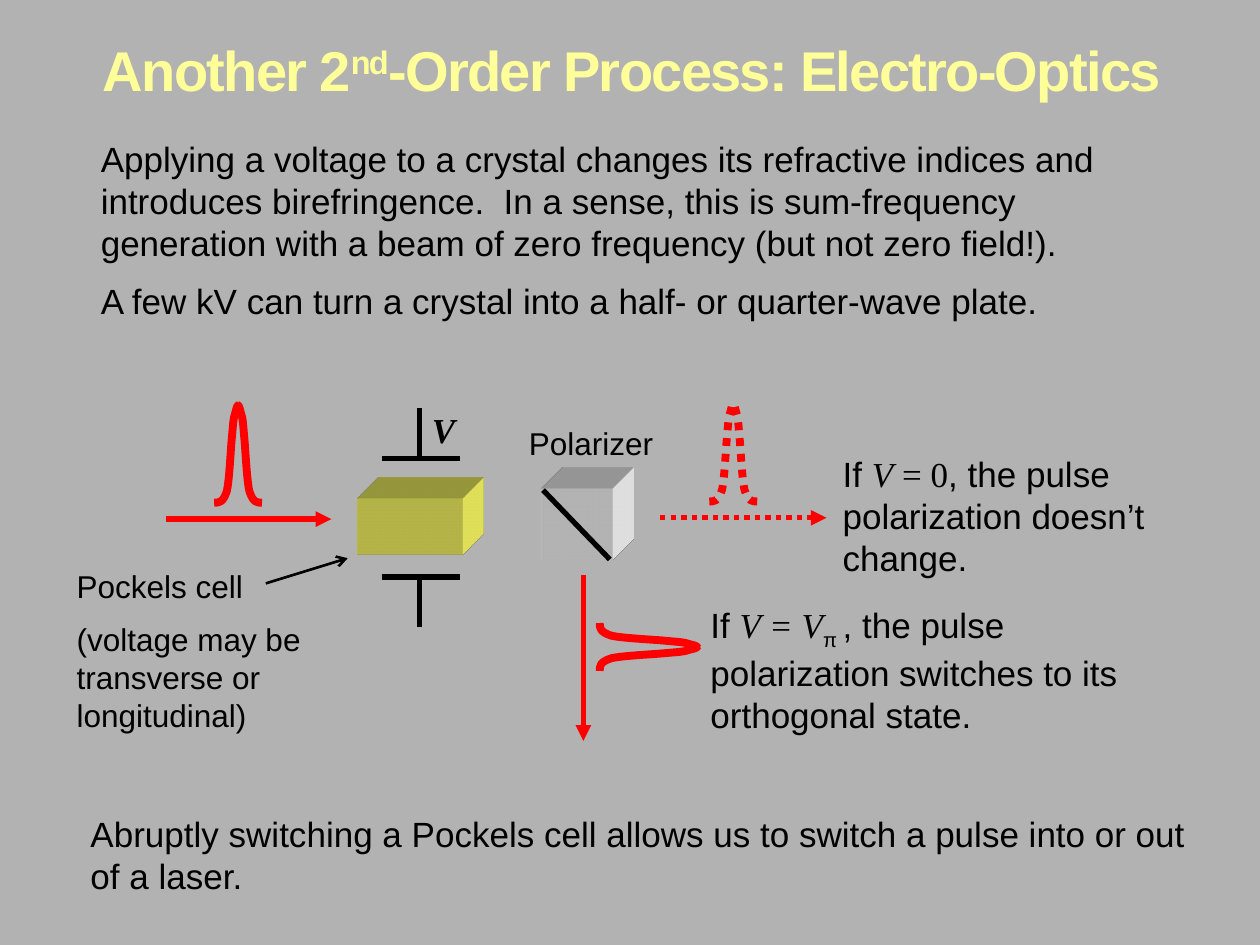
"""Build a slide on electro-optics: a Pockels cell, a polarizer and their pulses."""
from dataclasses import dataclass

import pptx
import pptx.dml.color
import pptx.enum.dml
import pptx.enum.shapes
import pptx.enum.text
import pptx.oxml.ns
import pptx.util
from lxml import etree

COLS, ROWS = 100, 75
CELL = pptx.util.Inches(10) / COLS
RED, BLACK = "FF0000", "000000"
SANS, SERIF = "Arial", "Times New Roman"
DEPTH = 4.7
MATH = {"face": SERIF, "italic": True}
HALF = ((1.9, 0), (1.5, 0), (1.2, 0), (0.9, 0.9), (0.7, 1.7), (0.6, 4), (0.5, 5.1),
        (0.4, 6.1), (0.4, 6.7), (0.2, 7.2), (0.1, 7.7), (0, 7.8), (-0.1, 7.8))


@dataclass(frozen=True)
class Line:
    """A straight line between two grid points."""
    start: tuple
    end: tuple
    color: str = BLACK
    width: float = 3
    head: str = ""
    dotted: bool = False


@dataclass(frozen=True)
class Pulse:
    """A bell-shaped pulse standing on a grid point."""
    foot: tuple
    turned: bool = False
    dotted: bool = False


@dataclass(frozen=True)
class Block:
    """A solid block given by its front face and its colour."""
    box: tuple
    color: str


@dataclass(frozen=True)
class Label:
    """A text box with its paragraphs, each a list of (text, format) runs."""
    box: tuple
    paras: list
    size: float = 20
    wrap: bool = True


def span(*cells: float) -> list:
    """Turn grid cells into lengths."""
    return [pptx.util.Emu(round(cell * CELL)) for cell in cells]


def shade(code: str):
    """Turn a hex string into a colour."""
    return pptx.dml.color.RGBColor.from_string(code)


def mark(parent, tag: str, **attrs: str):
    """Append a drawing element to its parent."""
    return etree.SubElement(parent, pptx.oxml.ns.qn(tag), attrs)


def style(run, face=SANS, size=20, color=BLACK, bold=False, italic=False, base=0, gap=0) -> None:
    """Format one run."""
    font = run.font
    font.name, font.size = face, pptx.util.Pt(size)
    font.bold, font.italic = bold, italic
    font.color.rgb = shade(color)
    props = run._r.get_or_add_rPr()
    if base:
        props.set("baseline", str(base * 1000))
    if gap:
        props.set("spc", str(gap * 100))


def write(frame, paras: list, wrap=True, align="LEFT", anchor="TOP", plain=False, **fmt) -> None:
    """Fill a text frame with paragraphs of formatted runs."""
    frame.word_wrap = wrap
    frame.auto_size = pptx.enum.text.MSO_AUTO_SIZE.NONE
    frame.vertical_anchor = getattr(pptx.enum.text.MSO_ANCHOR, anchor)
    for index, runs in enumerate(paras):
        para = frame.add_paragraph() if index else frame.paragraphs[0]
        if plain:
            props = para._p.get_or_add_pPr()
            props.set("marL", "0")
            props.set("indent", "0")
            mark(props, "a:buNone")
        para.alignment = getattr(pptx.enum.text.PP_ALIGN, align)
        para.space_before = pptx.util.Pt(9 if index else 0)
        for text, extra in runs:
            run = para.add_run()
            run.text = text
            style(run, **{**fmt, **extra})


def place(holder, box: tuple) -> None:
    """Move a placeholder to a grid box."""
    holder.left, holder.top, holder.width, holder.height = span(*box)


def stroke(line, color: str, width: float, dotted: bool) -> None:
    """Format an outline."""
    line.color.rgb = shade(color)
    line.width = pptx.util.Pt(width)
    if dotted:
        line.dash_style = pptx.enum.dml.MSO_LINE.ROUND_DOT


def draw_line(shapes, item: Line) -> None:
    """Draw a line or an arrow."""
    kind = pptx.enum.shapes.MSO_CONNECTOR.STRAIGHT
    link = shapes.add_connector(kind, *span(*item.start, *item.end))
    stroke(link.line, item.color, item.width, item.dotted)
    if item.head:
        mark(link.line._get_or_add_ln(), "a:tailEnd", type=item.head)
    mark(link._element.spPr, "a:effectLst")


def bend(shape) -> None:
    """Turn each three segments of an outline into one cubic curve."""
    parts = list(shape._element.iter(pptx.oxml.ns.qn("a:lnTo")))
    route = parts[0].getparent()
    for first in range(0, len(parts), 3):
        curve = mark(route, "a:cubicBezTo")
        for part in parts[first:first + 3]:
            curve.append(part[0])
            route.remove(part)


def draw_pulse(shapes, item: Pulse) -> None:
    """Draw both mirrored halves of a pulse."""
    x, y = item.foot
    for sign in (-1, 1):
        spots = [span(x + up, y + sign * out) if item.turned else span(x + sign * out, y - up)
                 for out, up in HALF]
        pen = shapes.build_freeform(*spots[0])
        pen.add_line_segments(spots[1:], close=False)
        shape = pen.convert_to_shape()
        bend(shape)
        shape.shadow.inherit = False
        shape.fill.background()
        stroke(shape.line, RED, 4.5, item.dotted)


def draw_block(shapes, item: Block) -> None:
    """Draw a rectangle extruded to the top right."""
    shape = shapes.add_shape(pptx.enum.shapes.MSO_SHAPE.RECTANGLE, *span(*item.box))
    shape.shadow.inherit = False
    shape.fill.solid()
    shape.fill.fore_color.rgb = shade(item.color)
    shape.line.fill.background()
    scene = mark(shape._element.spPr, "a:scene3d")
    mark(scene, "a:camera", prst="legacyObliqueTopRight")
    mark(scene, "a:lightRig", rig="legacyFlat3", dir="b")
    solid = mark(shape._element.spPr, "a:sp3d", extrusionH=str(span(DEPTH)[0]),
                 prstMaterial="legacyMatte")
    for tag in ("a:bevelT", "a:bevelB"):
        mark(solid, tag, w="13500", h="13500", prst="angle")
    mark(mark(solid, "a:extrusionClr"), "a:srgbClr", val=item.color)


BLOCKS = [
    Block((28.4, 39.6, 8.3, 4.4), "FFFF66"),
    Block((43, 38.8, 5.6, 5.6), "FFFFFF"),
]
LINES = [
    Line((13.2, 41.2), (26.3, 41.2), RED, head="triangle"),
    Line((52.4, 41.1), (65.6, 41.1), RED, head="triangle", dotted=True),
    Line((46.3, 45.6), (46.3, 58.8), RED, head="triangle"),
    Line((43.1, 38.9), (48.4, 44.4)),
    Line((21.1, 46.3), (27.6, 44.3), width=1.5, head="arrow"),
    *(Line((30.3, bar), (36.5, bar)) for bar in (36.4, 45.8)),
    *(Line((33.3, bar), (33.3, tip)) for bar, tip in ((36.2, 32.4), (46, 49.8))),
]
PULSES = [
    Pulse((18.9, 39.9)),
    Pulse((58.2, 39.8), dotted=True),
    Pulse((47.6, 51.35), turned=True),
]
TITLE = [[("Another 2", {}), ("nd", {"base": 30}), ("-Order Process: Electro-Optics", {})]]
BODY = [
    [("Applying a voltage to a crystal changes its refractive indices and introduces "
      "birefringence.  In a sense, this is sum-frequency generation with a beam of zero "
      "frequency (but not zero field!).", {})],
    [("A few kV can turn a crystal into a half- or quarter-wave plate.", {})],
]
LABELS = [
    Label((33.3, 31.9, 3.9, 4.3), [[("V", {**MATH, "bold": True})]], wrap=False),
    Label((65.9, 35.4, 26.7, 11), [[("If ", {}), ("V", MATH), (" = 0", {"face": SERIF}),
                                    (", the pulse polarization doesn’t change.", {})]]),
    Label((55.4, 47.4, 37, 11), [[("If ", {}), ("V = V", MATH), ("π ", {"base": -25}),
                                  (", the pulse polarization switches to its orthogonal state.",
                                   {})]]),
    Label((6.2, 64, 89.6, 7.7), [[("Abruptly switching a Pockels cell allows us to switch a "
                                   "pulse into or out of a laser.", {})]]),
    Label((5.1, 44.5, 20.4, 14.5), [[("Pockels cell", {})],
                                    [("(voltage may be transverse or longitudinal)", {})]], 18),
    Label((41, 33.2, 13.3, 4), [[("Polarizer", {})]], 18),
]


def main() -> None:
    """Build and save the slide."""
    deck = pptx.Presentation()
    deck.slide_width, deck.slide_height = span(COLS, ROWS)
    slide = deck.slides.add_slide(deck.slide_layouts[1])
    slide.background.fill.solid()
    slide.background.fill.fore_color.rgb = shade("B2B2B2")
    shapes = slide.shapes
    title, body = slide.placeholders
    place(title, (4.7, 3.4, 90.9, 4.2))
    write(title.text_frame, TITLE, align="CENTER", anchor="MIDDLE",
          size=32, color="FFFF99", bold=True, gap=-1)
    place(body, (7, 10.4, 86.7, 16))
    write(body.text_frame, BODY, plain=True)
    for draw, items in ((draw_block, BLOCKS), (draw_line, LINES), (draw_pulse, PULSES)):
        for item in items:
            draw(shapes, item)
    for label in LABELS:
        box = shapes.add_textbox(*span(*label.box))
        write(box.text_frame, label.paras, wrap=label.wrap, size=label.size)
    deck.save("out.pptx")


if __name__ == "__main__":
    main()
